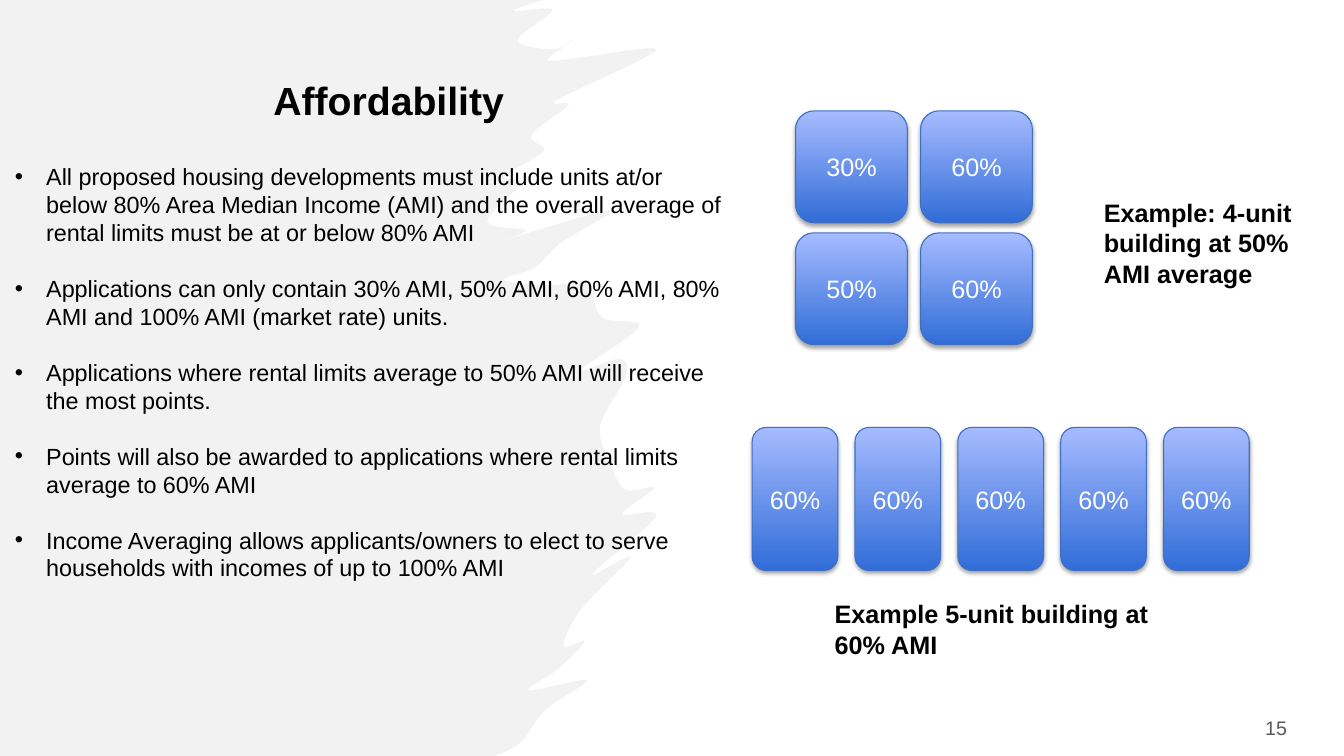
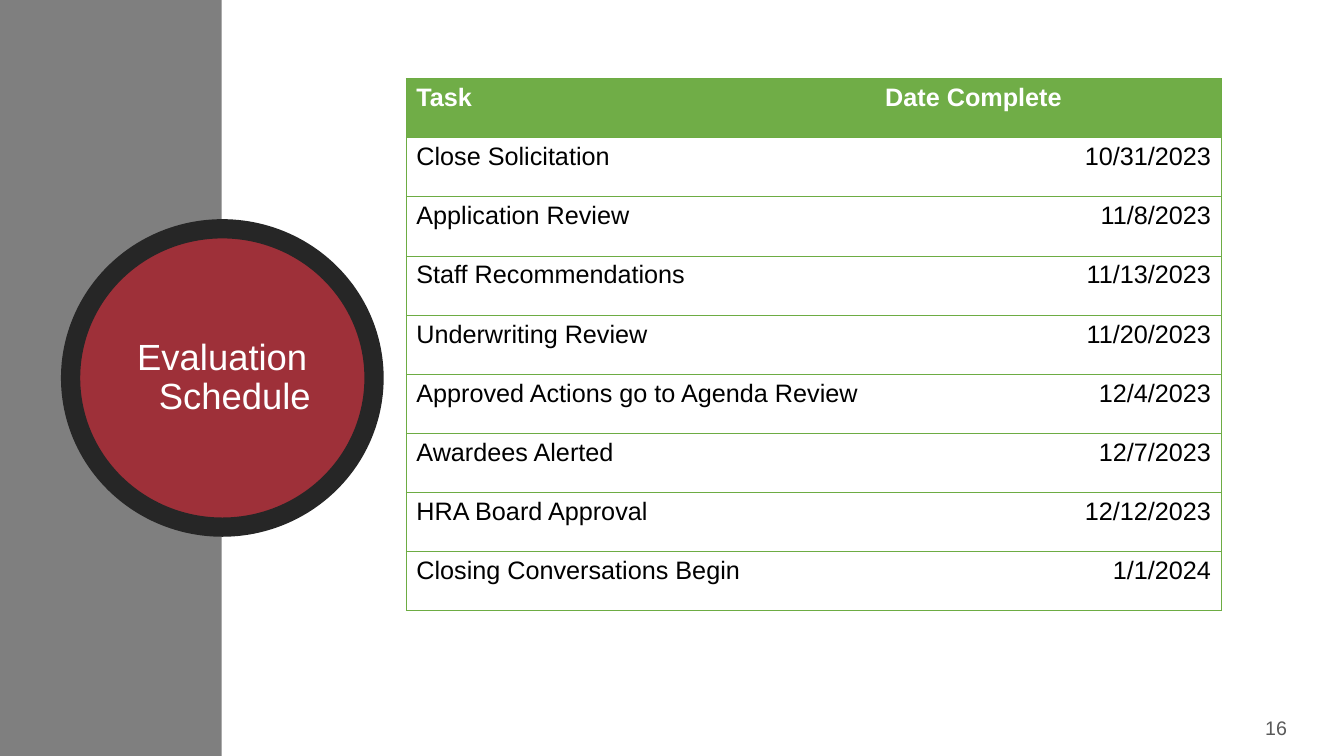
from lxml.etree import SubElement
from pptx import Presentation
from pptx.dml.color import RGBColor
from pptx.enum.shapes import MSO_SHAPE
from pptx.enum.text import MSO_ANCHOR, MSO_AUTO_SIZE, PP_ALIGN
from pptx.oxml.ns import qn
from pptx.util import Inches, Pt

FONT = "Arial"
BLACK = "000000"
WHITE = "FFFFFF"
PAGE_NUMBER_GRAY = "595959"
BRUSH_GRAY = "F2F2F2"
BAND_GRAY = "7F7F7F"
CIRCLE_RED = "9E3039"
CIRCLE_RIM = "262626"
UNIT_GRADIENT = ["316DD7", "A6BBFF"]
UNIT_LINE = "3F6FC3"
HEADER_GREEN = "70AD47"
BORDER_GREEN = "6DAC43"
FIRST_PAGE = 15
LINE_PITCH = Pt(19.95)
CURVE_STEPS = 6


def color(hex_value):
    return RGBColor.from_string(hex_value)


def write(shape, text, size, hex_value, bold=False, align=PP_ALIGN.LEFT, anchor=MSO_ANCHOR.TOP, hanging=0):
    frame = shape.text_frame
    frame.text = text
    frame.word_wrap = True
    frame.auto_size = MSO_AUTO_SIZE.NONE
    frame.vertical_anchor = anchor
    for paragraph in frame.paragraphs:
        paragraph.alignment = align
        if hanging:
            properties = paragraph._p.get_or_add_pPr()
            properties.set("marL", str(Inches(hanging)))
            properties.set("indent", str(-Inches(hanging)))
        for run in paragraph.runs:
            run.font.name = FONT
            run.font.size = Pt(size)
            run.font.bold = bold
            run.font.color.rgb = color(hex_value)
    return frame


presentation = Presentation()
presentation.slide_width = Inches(13.33)
presentation.slide_height = Inches(7.5)
title_only = presentation.slide_layouts[5]
affordability = presentation.slides.add_slide(title_only)
schedule = presentation.slides.add_slide(title_only)

for page, slide in enumerate(presentation.slides, FIRST_PAGE):
    page_number = slide.shapes.add_textbox(Inches(12.45), Inches(7.05), Inches(0.87), Inches(0.4))
    write(page_number, str(page), 14, PAGE_NUMBER_GRAY)

bristles = [
    (4.91, 7.5), (5.17, 7.36), (5.41, 7.04), (5.82, 6.75), (5.24, 6.85), (5.53, 6.64),
    (5.8, 6.36), (5.59, 6.41), (5.76, 6.05), (6.26, 5.52), (5.87, 5.7), (6.51, 5.12),
    (6.17, 5.1), (6.49, 4.84), (6.2, 4.86), (6.06, 4.61), (5.95, 4.23), (6.2, 3.75),
    (6.15, 3.56), (5.76, 3.67), (6.34, 3.24), (5.97, 3.15), (5.81, 2.82), (5.46, 2.83),
    (5, 2.78), (5.31, 2.65), (5.56, 2.41), (6.06, 2.08), (4.85, 2.43), (5.22, 2.29),
    (4.83, 2.2), (5.16, 1.82), (5, 1.75), (5.39, 1.5), (5.27, 1.34), (5.64, 1.04),
    (5.53, 0.99), (6.51, 0.5), (5.84, 0.56), (5.43, 0.6), (5.68, 0.4), (5.49, 0.49),
    (5.13, 0.4), (5.48, 0.1), (5.09, 0.11), (5.38, 0),
]
guides = [bristles[0], *bristles, bristles[-1]]
brush_edge = []
for before, start, end, after in zip(guides, guides[1:], guides[2:], guides[3:]):
    for step in range(CURVE_STEPS):
        t = step / CURVE_STEPS
        brush_edge.append(tuple(
            Inches(b + (c - a) * t / 2 + (2 * a - 5 * b + 4 * c - d) * t**2 / 2
                   + (3 * b - a - 3 * c + d) * t**3 / 2)
            for a, b, c, d in zip(before, start, end, after)))
brush_edge.append((Inches(5.38), 0))

builder = affordability.shapes.build_freeform(0, 0)
builder.add_line_segments([(0, presentation.slide_height), *brush_edge])
brush = builder.convert_to_shape()
band = schedule.shapes.add_shape(MSO_SHAPE.RECTANGLE, 0, 0, Inches(2.2), presentation.slide_height)
circle = schedule.shapes.add_shape(MSO_SHAPE.OVAL, Inches(0.7), Inches(2.27), Inches(3.01), Inches(2.96))
for shape, hex_value in [(brush, BRUSH_GRAY), (band, BAND_GRAY), (circle, CIRCLE_RED)]:
    shape.shadow.inherit = False
    shape.fill.solid()
    shape.fill.fore_color.rgb = color(hex_value)
    shape.line.fill.background()
circle.line.color.rgb = color(CIRCLE_RIM)
circle.line.width = Pt(13.75)

titles = [
    (affordability, "Affordability", (0.05, 0.71, 7.61, 0.63), 28, BLACK, True, 0),
    (schedule, "Evaluation Schedule", (1.14, 2.7, 2.13, 2.1), 26, WHITE, False, 0.25),
]
for slide, text, box, size, hex_value, bold, hanging in titles:
    title = slide.shapes.title
    title.left, title.top, title.width, title.height = map(Inches, box)
    frame = write(title, text, size, hex_value, bold, PP_ALIGN.CENTER, MSO_ANCHOR.MIDDLE, hanging)
    frame.paragraphs[0].line_spacing = 0.9
    slide.shapes._spTree.append(title._element)

rules = [
    "All proposed housing developments must include units at/or below 80% Area Median Income (AMI) "
    "and the overall average of rental limits must be at or below 80% AMI",
    "Applications can only contain 30% AMI, 50% AMI, 60% AMI, 80% AMI and 100% AMI (market rate) units.",
    "Applications where rental limits average to 50% AMI will receive the most points.",
    "Points will also be awarded to applications where rental limits average to 60% AMI",
    "Income Averaging allows applicants/owners to elect to serve households with incomes of up to 100% AMI",
]
rules_box = affordability.shapes.add_textbox(Inches(0.05), Inches(1.08), Inches(7.25), Inches(5.02))
frame = write(rules_box, "\n".join(rules), 16.7, BLACK, anchor=MSO_ANCHOR.BOTTOM, hanging=0.31)
frame.margin_bottom = Inches(0.33)
for index, paragraph in enumerate(frame.paragraphs):
    paragraph.line_spacing = LINE_PITCH
    if index:
        paragraph.space_before = LINE_PITCH
    properties = paragraph._p.get_or_add_pPr()
    SubElement(properties, qn("a:buFont"), typeface=FONT)
    SubElement(properties, qn("a:buChar"), char="•")

buildings = [
    (["30%", "60%", "50%", "60%"], 2, (7.89, 1.1), (1.24, 1.21), (1.11, 1.11),
     "Example: 4-unit building at 50% AMI average", (10.85, 1.91, 2.11, 1.01)),
    (["60%"] * 5, 5, (7.46, 4.24), (1.02, 0), (0.85, 1.42),
     "Example 5-unit building at 60% AMI", (8.18, 5.89, 3.39, 0.71)),
]
for shares, columns, (left, top), (step_x, step_y), (width, height), caption, caption_box in buildings:
    for index, share in enumerate(shares):
        row, column = divmod(index, columns)
        unit = affordability.shapes.add_shape(
            MSO_SHAPE.ROUNDED_RECTANGLE, Inches(left + step_x * column), Inches(top + step_y * row),
            Inches(width), Inches(height))
        unit.fill.gradient()
        unit.fill.gradient_angle = 90
        for stop, hex_value in zip(unit.fill.gradient_stops, UNIT_GRADIENT):
            stop.color.rgb = color(hex_value)
        unit.line.color.rgb = color(UNIT_LINE)
        unit.line.width = Pt(0.75)
        unit.shadow.inherit = False
        effects = unit._element.spPr.find(qn("a:effectLst"))
        shadow = SubElement(effects, qn("a:outerShdw"), blurRad=str(Pt(3.1)), dist=str(Pt(1.8)),
                            dir="5400000", rotWithShape="0")
        shade = SubElement(shadow, qn("a:srgbClr"), val=BLACK)
        SubElement(shade, qn("a:alpha"), val="35000")
        write(unit, share, 18, WHITE, align=PP_ALIGN.CENTER, anchor=MSO_ANCHOR.MIDDLE)
    write(affordability.shapes.add_textbox(*map(Inches, caption_box)), caption, 18, BLACK, True)

tasks = [
    ("Task", "Date Complete"),
    ("Close Solicitation", "10/31/2023"),
    ("Application Review", "11/8/2023"),
    ("Staff Recommendations", "11/13/2023"),
    ("Underwriting Review", "11/20/2023"),
    ("Approved Actions go to Agenda Review", "12/4/2023"),
    ("Awardees Alerted", "12/7/2023"),
    ("HRA Board Approval", "12/12/2023"),
    ("Closing Conversations Begin", "1/1/2024"),
]
table = schedule.shapes.add_table(
    len(tasks), 2, Inches(4.03), Inches(0.78), Inches(8.08), Inches(5.28)).table
table.horz_banding = False
table.columns[0].width = Inches(4.65)
table.columns[1].width = Inches(3.43)
for row, values in enumerate(tasks):
    for column, value in enumerate(values):
        cell = table.cell(row, column)
        cell.text = value
        paragraph = cell.text_frame.paragraphs[0]
        paragraph.alignment = PP_ALIGN.RIGHT if row and column else PP_ALIGN.LEFT
        font = paragraph.runs[0].font
        font.name = FONT
        font.size = Pt(18)
        font.bold = row == 0
        font.color.rgb = color(BLACK if row else WHITE)
        inner_edge = "a:lnL" if column else "a:lnR"
        properties = cell._tc.get_or_add_tcPr()
        for edge in ["a:lnL", "a:lnR", "a:lnT", "a:lnB"]:
            border = SubElement(properties, qn(edge), w=str(Pt(0.75)))
            if edge == inner_edge:
                SubElement(border, qn("a:noFill"))
            else:
                border_fill = SubElement(border, qn("a:solidFill"))
                SubElement(border_fill, qn("a:srgbClr"), val=BORDER_GREEN)
        if row:
            cell.fill.background()
        else:
            cell.fill.solid()
            cell.fill.fore_color.rgb = color(HEADER_GREEN)

presentation.save("out.pptx")
